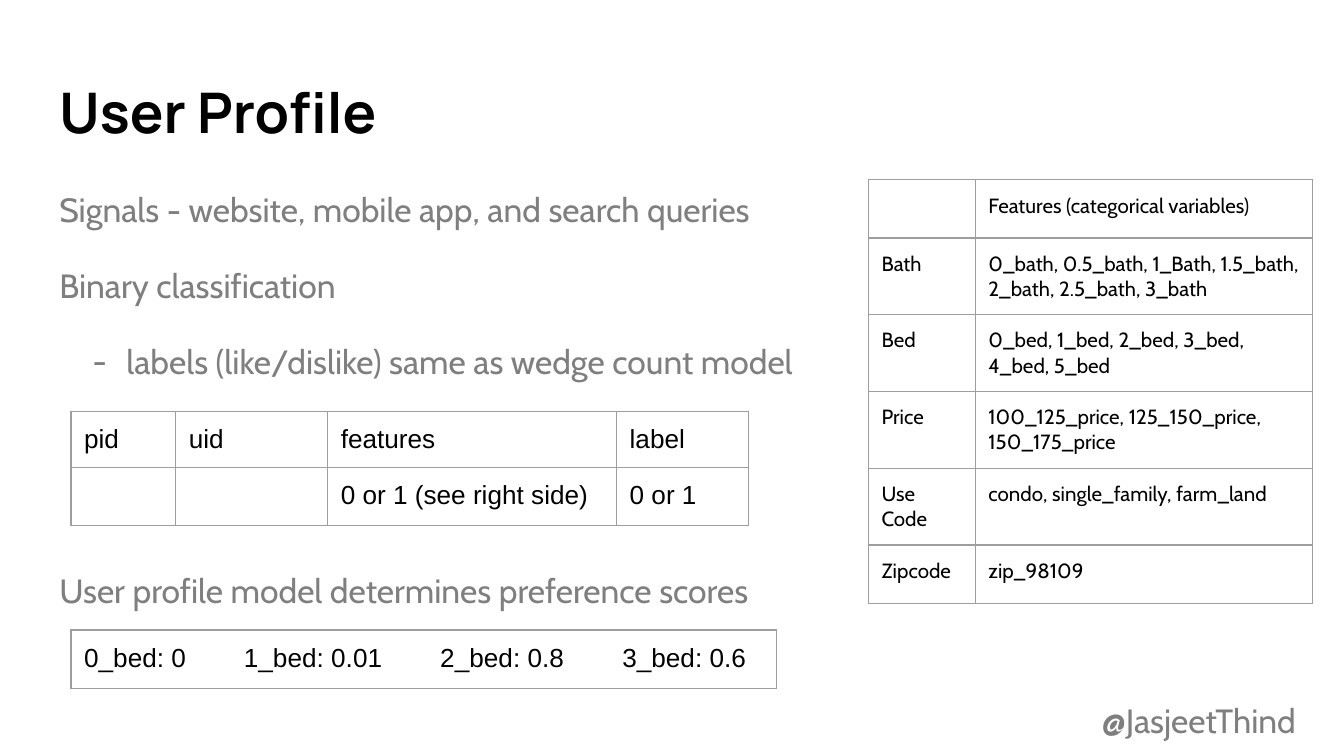
"""Build the User Profile slide: signals, feature tables and preference scores."""
from lxml import etree
from pptx import Presentation
from pptx.dml.color import RGBColor
from pptx.enum import text
from pptx.oxml import ns
from pptx.util import Cm, Pt

COLORS = {"ink": "000000", "muted": "7F7F7F", "grid": "9E9E9E"}
FORMATS = {
    "title": {"name": "Manrope", "size": Pt(30), "bold": True, "color": "ink"},
    "body": {"name": "Cabin", "size": Pt(18), "bold": False, "color": "muted"},
    "feature": {"name": "Cabin", "size": Pt(11), "bold": False, "color": "ink"},
    "data": {"name": "Arial", "size": Pt(14), "bold": False, "color": "ink"},
}
TITLE = "User Profile"
HANDLE = "@JasjeetThind"
POINTS = [  # text, dashed, space before in points
    ("Signals - website, mobile app, and search queries", False, 0),
    ("Binary classification", False, 16),
    ("labels (like/dislike) same as wedge count model", True, 16),
    ("User profile model determines preference scores", False, 98),
]
SCORES = ["0_bed: 0", "1_bed: 0.01", "2_bed: 0.8", "3_bed: 0.6"]
SCORE_TABS = [3.02, 6.73, 10.17]
TABLES = [
    {"format": "feature", "at": (16.41, 3.4), "widths": [2.02, 6.37],
     "heights": [1.1, 1.45, 1.45, 1.45, 1.45, 1.1],
     "rows": [
         ("", "Features (categorical variables)"),
         ("Bath", "0_bath, 0.5_bath, 1_Bath, 1.5_bath, 2_bath, 2.5_bath, 3_bath"),
         ("Bed", "0_bed, 1_bed, 2_bed, 3_bed, 4_bed, 5_bed"),
         ("Price", "100_125_price, 125_150_price, 150_175_price"),
         ("Use\nCode", "condo, single_family, farm_land"),
         ("Zipcode", "zip_98109")]},
    {"format": "data", "at": (1.34, 7.78), "widths": [1.98, 2.87, 5.46, 2.49],
     "heights": [1.06, 1.1],
     "rows": [("pid", "uid", "features", "label"),
              ("", "", "0 or 1 (see right side)", "0 or 1")]},
    {"format": "data", "at": (1.34, 11.91), "widths": [13.34], "heights": [1.1],
     "rows": [("\t".join(SCORES),)]},
]
MARGINS = dict.fromkeys(
    ("margin_left", "margin_top", "margin_right", "margin_bottom"), Cm(0.25))


def add_node(parent, tag, **attributes):
    return etree.SubElement(parent, ns.qn(tag), attributes)


def set_all(target, values):
    for key, value in values.items():
        setattr(target, key, value)


def write(paragraph, words, style):
    font_values = dict(FORMATS[style])
    color = font_values.pop("color")
    run = paragraph.add_run()
    run.text = words
    set_all(run.font, font_values)
    run.font.color.rgb = RGBColor.from_string(COLORS[color])


def place(shape, left, top, width, height, anchor):
    set_all(shape, {"left": Cm(left), "top": Cm(top),
                    "width": Cm(width), "height": Cm(height)})
    set_all(shape.text_frame, {**MARGINS, "word_wrap": True, "vertical_anchor": anchor,
                               "auto_size": text.MSO_AUTO_SIZE.NONE})
    return shape.text_frame.paragraphs[0]


def fill_cell(cell, words, style):
    set_all(cell, MARGINS)
    frame = cell.text_frame
    for index, line in enumerate(words.split("\n")):
        paragraph = frame.add_paragraph() if index else frame.paragraphs[0]
        if not line:
            add_node(paragraph._p, "a:endParaRPr", sz="1100")
            continue
        if "\t" in line:
            stops = add_node(paragraph._p.get_or_add_pPr(), "a:tabLst")
            for stop in SCORE_TABS:
                add_node(stops, "a:tab", pos=str(Cm(stop)), algn="l")
        write(paragraph, line, style)
    properties = cell._tc.get_or_add_tcPr()
    for edge in "LRTB":
        border = add_node(properties, f"a:ln{edge}", w=str(Pt(0.75)))
        add_node(add_node(border, "a:solidFill"), "a:srgbClr", val=COLORS["grid"])
    cell.fill.background()


def add_grid(slide, spec_table):
    rows, widths, heights = (spec_table[key] for key in ("rows", "widths", "heights"))
    left, top = spec_table["at"]
    grid = slide.shapes.add_table(len(rows), len(widths), Cm(left), Cm(top),
                                  Cm(sum(widths)), Cm(sum(heights))).table
    set_all(grid, {"first_row": False, "horz_banding": False})
    for column, width in zip(grid.columns, widths):
        column.width = Cm(width)
    for row, height, entries in zip(grid.rows, heights, rows):
        row.height = Cm(height)
        for cell, words in zip(row.cells, entries):
            fill_cell(cell, words, spec_table["format"])


def main():
    deck = Presentation()
    set_all(deck, {"slide_width": Cm(25.4), "slide_height": Cm(14.29)})
    slide = deck.slides.add_slide(deck.slide_layouts[1])
    middle, top = text.MSO_ANCHOR.MIDDLE, text.MSO_ANCHOR.TOP

    heading = place(slide.shapes.title, 0.87, 1.24, 23.67, 1.73, middle)
    heading.alignment = text.PP_ALIGN.LEFT
    write(heading, TITLE, "title")

    body = slide.placeholders[1]
    first = place(body, 0.87, 3.2, 23.67, 9.5, top)
    for index, (words, dashed, gap) in enumerate(POINTS):
        point = body.text_frame.add_paragraph() if index else first
        set_all(point, {"line_spacing": 1.15, "space_before": Pt(gap),
                        "alignment": text.PP_ALIGN.LEFT})
        properties = point._p.get_or_add_pPr()
        properties.set("marL", str(Cm(1.27 if dashed else 0)))
        properties.set("indent", str(Cm(-0.64 if dashed else 0)))
        if dashed:
            add_node(add_node(properties, "a:buClr"), "a:srgbClr", val=COLORS["muted"])
            add_node(properties, "a:buFont", typeface="Cabin")
            add_node(properties, "a:buChar", char="-")
        else:
            add_node(properties, "a:buNone")
        write(point, words, "body")

    for table in TABLES:
        add_grid(slide, table)

    box = slide.shapes.add_textbox(0, 0, 0, 0)
    write(place(box, 20.57, 12.93, 4.83, 1.36, middle), HANDLE, "body")
    deck.save("out.pptx")


if __name__ == "__main__":
    main()
